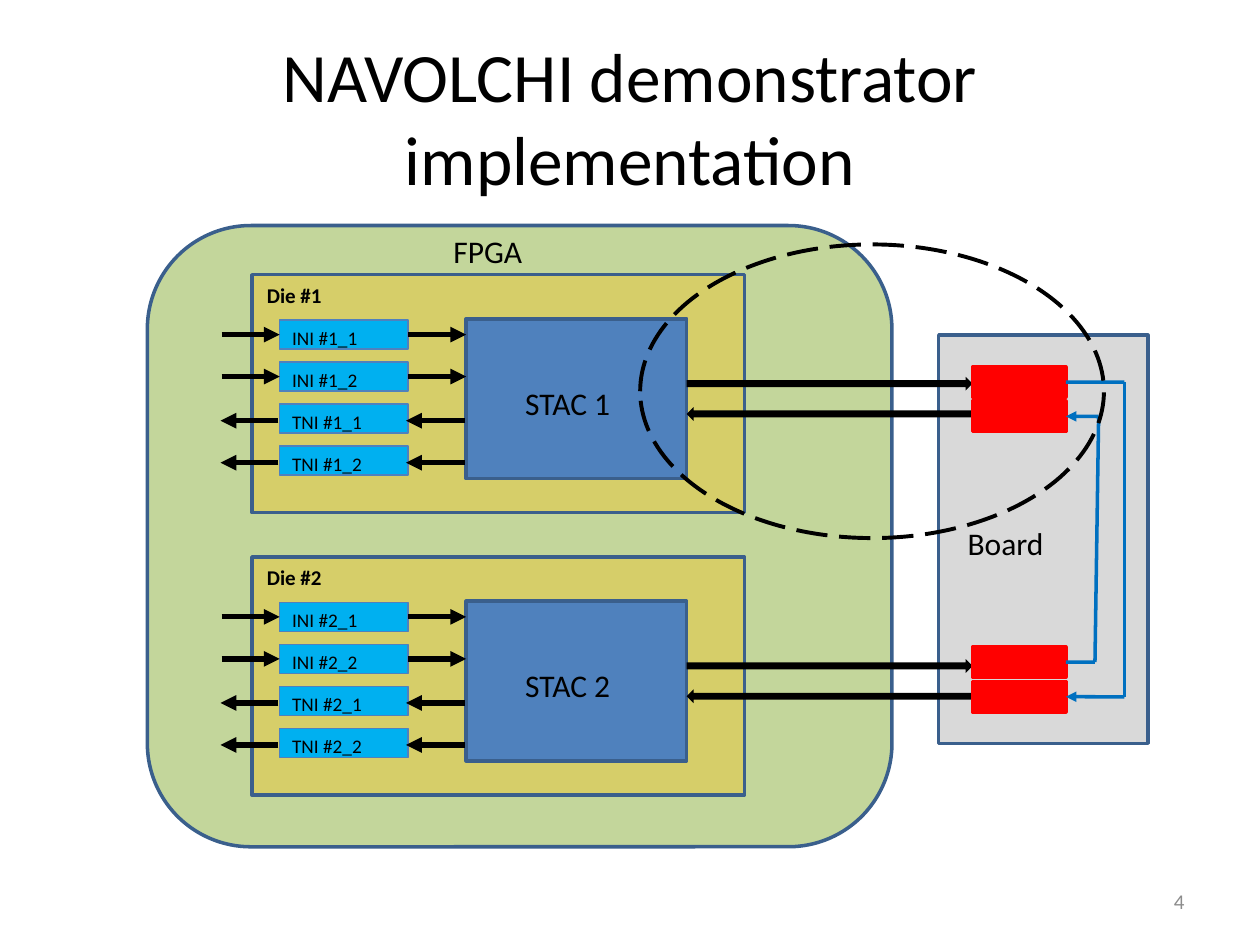
"""Build the demonstrator implementation slide: two dies on an FPGA, linked through a board."""
from lxml import etree
from pptx import Presentation
from pptx.dml.color import RGBColor
from pptx.enum import dml, shapes, text
from pptx.oxml import ns
from pptx.util import Pt

SHAPE = shapes.MSO_SHAPE
ALIGN = text.PP_ALIGN
BLACK, EDGE, BLUE, RED = "000000", "3A5F8C", "0070C0", "FF0000"
LEFT, RIGHT = 1, 3
DIE_PITCH, ROW_PITCH = 161.3, 24


def rgb(value):
    return RGBColor.from_string(value)


class Deck:
    def __init__(self, prs, font="Calibri"):
        self.font = font
        self.s = prs.slides.add_slide(prs.slide_layouts[5])

    def put_text(self, sp, words, size, color=BLACK, bold=False, align=ALIGN.LEFT,
                 anchor=text.MSO_ANCHOR.TOP):
        tf = sp.text_frame
        tf.text = words
        tf.word_wrap = True
        tf.auto_size = text.MSO_AUTO_SIZE.NONE
        tf.vertical_anchor = anchor
        p = tf.paragraphs[0]
        p.alignment = align
        f = p.runs[0].font
        f.name, f.size, f.bold = self.font, Pt(size), bold
        f.color.rgb = rgb(color)

    def title(self, words, box, size):
        sp = self.s.shapes.title
        sp.left, sp.top, sp.width, sp.height = map(Pt, box)
        self.put_text(sp, words, size, align=ALIGN.CENTER, anchor=text.MSO_ANCHOR.MIDDLE)

    def label(self, words, box, size, **style):
        sp = self.s.shapes.add_textbox(*map(Pt, box))
        self.put_text(sp, words, size, **style)

    def shape(self, kind, box, fill=None, line=None, width=2, dash=None, alpha=None):
        sp = self.s.shapes.add_shape(kind, *map(Pt, box))
        sp.shadow.inherit = False
        if fill:
            sp.fill.solid()
            sp.fill.fore_color.rgb = rgb(fill)
        else:
            sp.fill.background()
        if alpha:
            clr = sp._element.spPr.find(".//" + ns.qn("a:srgbClr"))
            etree.SubElement(clr, ns.qn("a:alpha")).set("val", str(alpha * 1000))
        if line:
            sp.line.color.rgb = rgb(line)
            sp.line.width = Pt(width)
            if dash:
                sp.line.dash_style = dash
        else:
            sp.line.fill.background()
        return sp

    def line(self, start, end, color=BLACK, width=3, arrow=True, begin=None, finish=None):
        c = self.s.shapes.add_connector(shapes.MSO_CONNECTOR.STRAIGHT, *map(Pt, start + end))
        c.line.color.rgb = rgb(color)
        c.line.width = Pt(width)
        spPr = c._element.spPr
        if arrow:
            ln = spPr.find(ns.qn("a:ln"))
            etree.SubElement(ln, ns.qn("a:tailEnd")).set("type", "triangle")
        etree.SubElement(spPr, ns.qn("a:effectLst"))
        if begin:
            c.begin_connect(*begin)
        if finish:
            c.end_connect(*finish)

    def die(self, number, dy):
        self.shape(SHAPE.RECTANGLE, (144, 157 + dy, 281.5, 136), "FFC000", EDGE, alpha=32)
        self.shape(SHAPE.RECTANGLE, (266.4, 182.2 + dy, 126, 91.4), "4F81BD", EDGE)
        self.label(f"STAC {number}", (293, 216 + dy, 73.4, 23), 18)
        self.shape(SHAPE.RIGHT_ARROW, (392.4, 215.3 + dy, 163.4, 7.9), BLACK)
        self.shape(SHAPE.LEFT_ARROW, (392.4, 232.6 + dy, 163.4, 7.9), BLACK)
        for i, (kind, port) in enumerate((k, n) for k in ("INI", "TNI") for n in (1, 2)):
            top = 182.9 + dy + i * ROW_PITCH
            sp = self.shape(SHAPE.RECTANGLE, (159.8, top, 73.4, 16.6), "00B0F0", "4F81BD", 0.75)
            self.put_text(sp, f"{kind} #{number}_{port}", 11)
            if kind == "INI":
                y = top + 8.3
                self.line((126.7, y), (159.8, y), finish=(sp, LEFT))
                self.line((233.2, y), (266.4, y), begin=(sp, RIGHT))
            else:
                y = top + 9.5
                self.line((159.1, y), (126, y))
                self.line((265.7, y), (232, y))
        self.label(f"Die #{number}", (145.4, 157.7 + dy, 63.4, 17.3), 12, bold=True)

    def loop(self, source, target, y1, y2, x1, x2):
        edge = 609.1
        self.line((edge, y1), (x1, y1), BLUE, 2, False, begin=(source, RIGHT))
        self.line((x1, y1), (x2, y2), BLUE, 2, False)
        self.line((x2, y2), (edge, y2), BLUE, 2, finish=(target, RIGHT))


def main():
    prs = Presentation()
    prs.slide_width, prs.slide_height = Pt(720), Pt(540)
    d = Deck(prs)
    d.title("NAVOLCHI demonstrator implementation", (36, 21.6, 648, 90), 39.6)
    d.shape(SHAPE.RECTANGLE, (536.4, 191.5, 119.5, 233.3), "D9D9D9", EDGE)
    d.shape(SHAPE.ROUNDED_RECTANGLE, (84.2, 128.9, 425.5, 355), "C3D69B", EDGE)
    for i in range(2):
        d.die(i + 1, i * DIE_PITCH)
    ports = [d.shape(SHAPE.RECTANGLE, (555.8, y, 53.3, 17.3), RED, RED)
             for y in (209.7, 229.3, 369.7, 389.5)]
    d.loop(ports[0], ports[3], 218.4, 398.2, 642.5, 642.5)
    d.loop(ports[2], ports[1], 378.4, 238, 625.7, 627.8)
    d.label("FPGA", (252, 128.9, 73.4, 23), 18)
    d.label("Board", (545.8, 295.9, 73.4, 23), 18)
    d.shape(SHAPE.OVAL, (365.8, 139.7, 265, 167.8), line=BLACK, width=2.25,
            dash=dml.MSO_LINE.LONG_DASH)
    d.label("4", (516.2, 500.4, 167.8, 28.8), 12, color="8C8C8C", align=ALIGN.RIGHT,
            anchor=text.MSO_ANCHOR.MIDDLE)
    prs.save("out.pptx")


if __name__ == "__main__":
    main()
